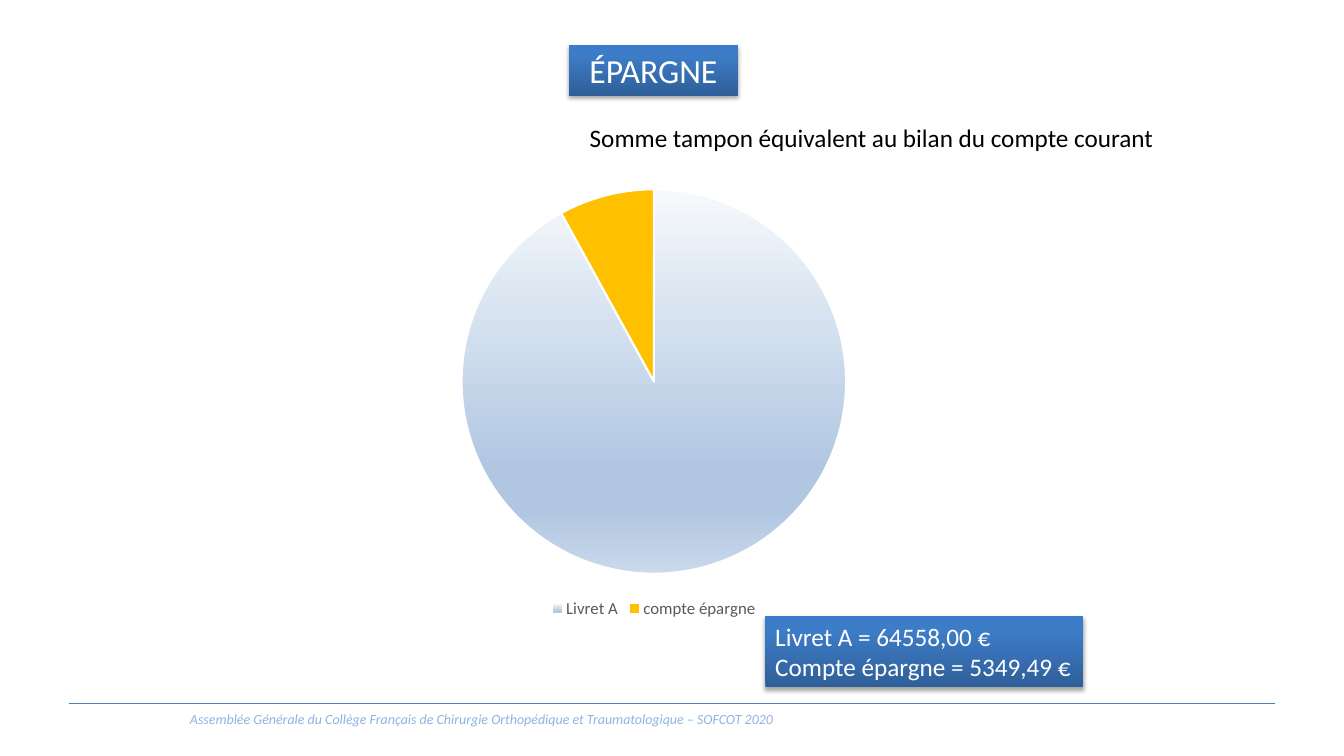
"""Build the savings slide with its pie chart and two gradient panels."""
from dataclasses import dataclass

from lxml import etree
from pptx import Presentation
from pptx.chart.data import CategoryChartData
from pptx.dml.color import RGBColor
from pptx.enum.chart import XL_CHART_TYPE, XL_LEGEND_POSITION
from pptx.enum.shapes import MSO_CONNECTOR, MSO_SHAPE
from pptx.enum.text import MSO_ANCHOR, MSO_AUTO_SIZE, PP_ALIGN
from pptx.oxml.ns import qn
from pptx.util import Inches, Pt

PIE = XL_CHART_TYPE.PIE
LEGEND_BOTTOM = XL_LEGEND_POSITION.BOTTOM
STRAIGHT = MSO_CONNECTOR.STRAIGHT
RECTANGLE = MSO_SHAPE.RECTANGLE
TOP = MSO_ANCHOR.TOP
FIT_TEXT = MSO_AUTO_SIZE.SHAPE_TO_FIT_TEXT
LEFT, CENTER = PP_ALIGN.LEFT, PP_ALIGN.CENTER

FONT = "Calibri"
WHITE = "FFFFFF"
PANEL_STOPS = ((0, "2F5F99"), (80, "3D7CC7"), (100, "3A7CCB"))
PIE_STOPS = ((0, "F6F9FC"), (74, "B0C6E1"), (83, "B0C6E1"), (100, "CAD9EB"))
UPWARD, DOWNWARD = 90, 270


@dataclass(frozen=True)
class Label:
    """Describe a block of text, on a panel or on the bare slide."""
    lines: tuple[str, ...]
    box: tuple[float, float, float, float]
    size: int
    color: str
    alignment: PP_ALIGN = LEFT
    italic: bool = False
    panel: bool = False
    wrap: bool = True


LABELS = (
    Label(("Assemblée Générale du Collège Français de Chirurgie Orthopédique "
           "et Traumatologique – SOFCOT 2020",),
          (0.68, 7, 8.19, 0.27), 10, "8EB4E3", CENTER, italic=True),
    Label(("ÉPARGNE",), (5.64, 0.45, 1.68, 0.5), 24, WHITE, CENTER, panel=True),
    Label(("Somme tampon équivalent au bilan du compte courant",),
          (5.75, 1.16, 5.91, 0.4), 18, "000000"),
    Label(("Livret A = 64558,00 €", "Compte épargne = 5349,49 €"),
          (7.59, 6.11, 3.15, 0.71), 18, WHITE, panel=True, wrap=False),
)


def rgb(value: str) -> RGBColor:
    """Turn a hex string into a colour."""
    return RGBColor.from_string(value)


def set_gradient(fill, properties, stops: tuple, angle: int) -> None:
    """Give a fill a linear gradient with any number of stops."""
    fill.gradient()
    fill.gradient_angle = angle
    stop_list = properties.find(qn("a:gradFill")).find(qn("a:gsLst"))
    stop_list.clear()
    for percent, color in stops:
        stop = etree.SubElement(stop_list, qn("a:gs"), pos=str(percent * 1000))
        etree.SubElement(stop, qn("a:srgbClr"), val=color)


def add_shadow(shape) -> None:
    """Drop a soft shadow straight below a shape."""
    shape.shadow.inherit = False
    effects = shape._element.spPr.find(qn("a:effectLst"))
    shadow = etree.SubElement(
        effects, qn("a:outerShdw"), blurRad=str(Pt(3.1)), dist=str(Pt(1.8)),
        dir="5400000", rotWithShape="0")
    color = etree.SubElement(shadow, qn("a:srgbClr"), val="000000")
    etree.SubElement(color, qn("a:alpha"), val="35000")


def add_label(slide, label: Label) -> None:
    """Draw a label and its panel if it has one."""
    box = [Inches(length) for length in label.box]
    if label.panel:
        shape = slide.shapes.add_shape(RECTANGLE, *box)
        set_gradient(shape.fill, shape._element.spPr, PANEL_STOPS, UPWARD)
        shape.line.fill.background()
        add_shadow(shape)
    else:
        shape = slide.shapes.add_textbox(*box)
    frame = shape.text_frame
    frame.word_wrap = label.wrap
    frame.auto_size = FIT_TEXT
    frame.vertical_anchor = TOP
    for index, line in enumerate(label.lines):
        paragraph = frame.add_paragraph() if index else frame.paragraphs[0]
        paragraph.alignment = label.alignment
        run = paragraph.add_run()
        run.text = line
        run.font.name = FONT
        run.font.size = Pt(label.size)
        run.font.italic = label.italic
        run.font.color.rgb = rgb(label.color)


def add_footer_rule(slide) -> None:
    """Draw the thin line above the footer."""
    rule = slide.shapes.add_connector(
        STRAIGHT, Inches(0.68), Inches(6.98), Inches(12.65), Inches(6.98))
    rule.line.color.rgb = rgb("4B7EBC")
    rule.line.width = Pt(0.75)
    etree.SubElement(rule._element.spPr, qn("a:effectLst"))


def add_savings_pie(slide) -> None:
    """Draw the pie of the two savings accounts."""
    data = CategoryChartData()
    data.categories = ["Livret A", "compte épargne"]
    data.add_series("Épargne", (92, 8))
    chart = slide.shapes.add_chart(
        PIE, Inches(3.15), Inches(1.74), Inches(6.67), Inches(4.44), data).chart
    chart.has_title = False
    chart.font.name = FONT
    chart.font.size = Pt(10)
    chart.font.color.rgb = rgb("000000")
    chart.has_legend = True
    legend = chart.legend
    legend.position = LEGEND_BOTTOM
    legend.include_in_layout = False
    legend.font.name = FONT
    legend.font.size = Pt(12)
    legend.font.color.rgb = rgb("595959")
    plot = chart.plots[0]
    plot.vary_by_categories = True
    series = plot.series[0]
    livret, compte = (series.points[index].format for index in range(2))
    for slice_format in (livret, compte):
        slice_format.line.color.rgb = rgb(WHITE)
        slice_format.line.width = Pt(1.5)
    livret_properties = series._element.xpath("c:dPt/c:spPr")[0]
    set_gradient(livret.fill, livret_properties, PIE_STOPS, DOWNWARD)
    compte.fill.solid()
    compte.fill.fore_color.rgb = rgb("FFC000")


def main() -> None:
    """Assemble and save the presentation."""
    presentation = Presentation()
    presentation.slide_width = Inches(13.33)
    presentation.slide_height = Inches(7.5)
    slide = presentation.slides.add_slide(presentation.slide_layouts[6])
    add_footer_rule(slide)
    add_savings_pie(slide)
    for label in LABELS:
        add_label(slide, label)
    presentation.save("out.pptx")


if __name__ == "__main__":
    main()
